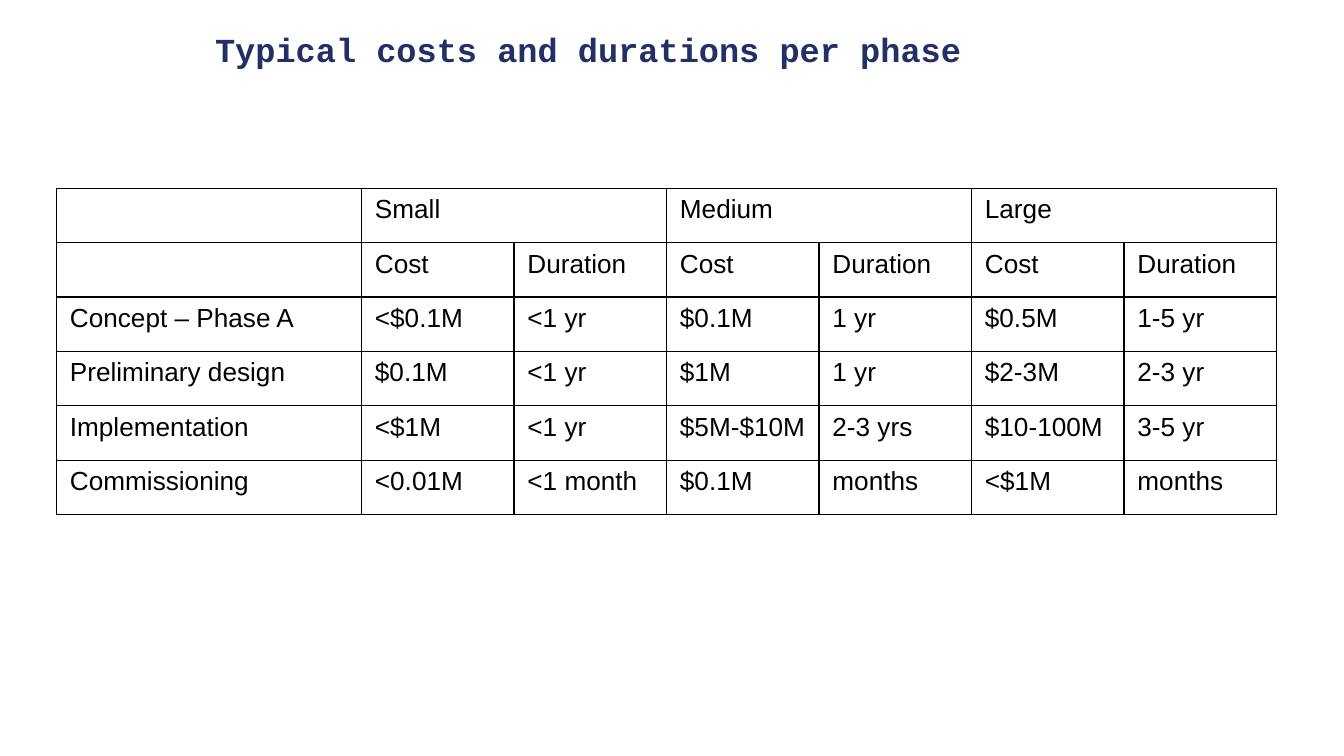
from lxml.etree import SubElement
from pptx import Presentation
from pptx.dml.color import RGBColor
from pptx.enum.text import MSO_ANCHOR, MSO_AUTO_SIZE, PP_ALIGN
from pptx.oxml.ns import qn
from pptx.util import Inches, Pt

WIDTH = 10
HEIGHT = WIDTH * 9 / 16
PHASE_COSTS = [
    ["", "Small", "", "Medium", "", "Large", ""],
    [""] + ["Cost", "Duration"] * 3,
    ["Concept – Phase A", "<$0.1M", "<1 yr", "$0.1M", "1 yr", "$0.5M", "1-5 yr"],
    ["Preliminary design", "$0.1M", "<1 yr", "$1M", "1 yr", "$2-3M", "2-3 yr"],
    ["Implementation", "<$1M", "<1 yr", "$5M-$10M", "2-3 yrs", "$10-100M", "3-5 yr"],
    ["Commissioning", "<0.01M", "<1 month", "$0.1M", "months", "<$1M", "months"],
]


def color(hex_code):
    return RGBColor.from_string(hex_code)


class PhaseSlide:
    title_font, title_size, title_color = "Courier New", 18, "232F67"
    body_font, body_size, ink = "Arial", 14, "000000"
    border_width = 0.75
    column, row = 9.08 / 8, 2.43 / 6  # table grid unit, in inches

    def __init__(self, deck):
        self.slide = deck.slides.add_slide(deck.slide_layouts[5])

    def style(self, paragraph, font, size, hex_code, bold=False):
        paragraph.alignment = PP_ALIGN.LEFT
        paragraph.font.name = font
        paragraph.font.size = Pt(size)
        paragraph.font.bold = bold
        paragraph.font.color.rgb = color(hex_code)

    def title(self, text, left, top, width, height):
        heading = self.slide.shapes.title
        heading.left, heading.top = Inches(left * WIDTH), Inches(top * HEIGHT)
        heading.width, heading.height = Inches(width * WIDTH), Inches(height * HEIGHT)
        frame = heading.text_frame
        frame.text = text
        frame.word_wrap = True
        frame.auto_size = MSO_AUTO_SIZE.NONE
        frame.vertical_anchor = MSO_ANCHOR.BOTTOM
        frame.margin_left = frame.margin_right = Inches(0.1)
        frame.margin_top = frame.margin_bottom = Inches(0.1)
        self.style(frame.paragraphs[0], self.title_font, self.title_size,
                   self.title_color, bold=True)

    def borders(self, cell):
        properties = cell._tc.get_or_add_tcPr()
        for side in ("a:lnL", "a:lnR", "a:lnT", "a:lnB"):
            line = SubElement(properties, qn(side), w=str(Pt(self.border_width)))
            fill = SubElement(line, qn("a:solidFill"))
            SubElement(fill, qn("a:srgbClr"), val=self.ink)

    def table(self, rows, left, top, spans):
        """Draw rows on the grid; spans gives each column's width in units."""
        grid = self.slide.shapes.add_table(
            len(rows), len(spans), Inches(left * WIDTH), Inches(top * HEIGHT),
            Inches(sum(spans) * self.column), Inches(len(rows) * self.row)).table
        grid.first_row = grid.horz_banding = False
        for grid_column, span in zip(grid.columns, spans):
            grid_column.width = Inches(span * self.column)
        for grid_row, texts in zip(grid.rows, rows):
            grid_row.height = Inches(self.row)
            for cell, text in zip(grid_row.cells, texts):
                cell.text = text
                self.borders(cell)
                cell.fill.background()
                self.style(cell.text_frame.paragraphs[0], self.body_font,
                           self.body_size, self.ink)
        return grid


def main():
    deck = Presentation()
    deck.slide_width, deck.slide_height = Inches(WIDTH), Inches(HEIGHT)
    page = PhaseSlide(deck)

    # Costs and durations, with a double-width label column
    costs = page.table(PHASE_COSTS, 0.042, 0.249, [2] + [1] * 6)

    # Each project size heads its cost and duration columns
    for first in (1, 3, 5):
        costs.cell(0, first).merge(costs.cell(0, first + 1))

    # Title
    page.title("Typical costs and durations per phase", 0.15, 0.01, 0.59, 0.1)

    deck.save("out.pptx")


if __name__ == "__main__":
    main()
